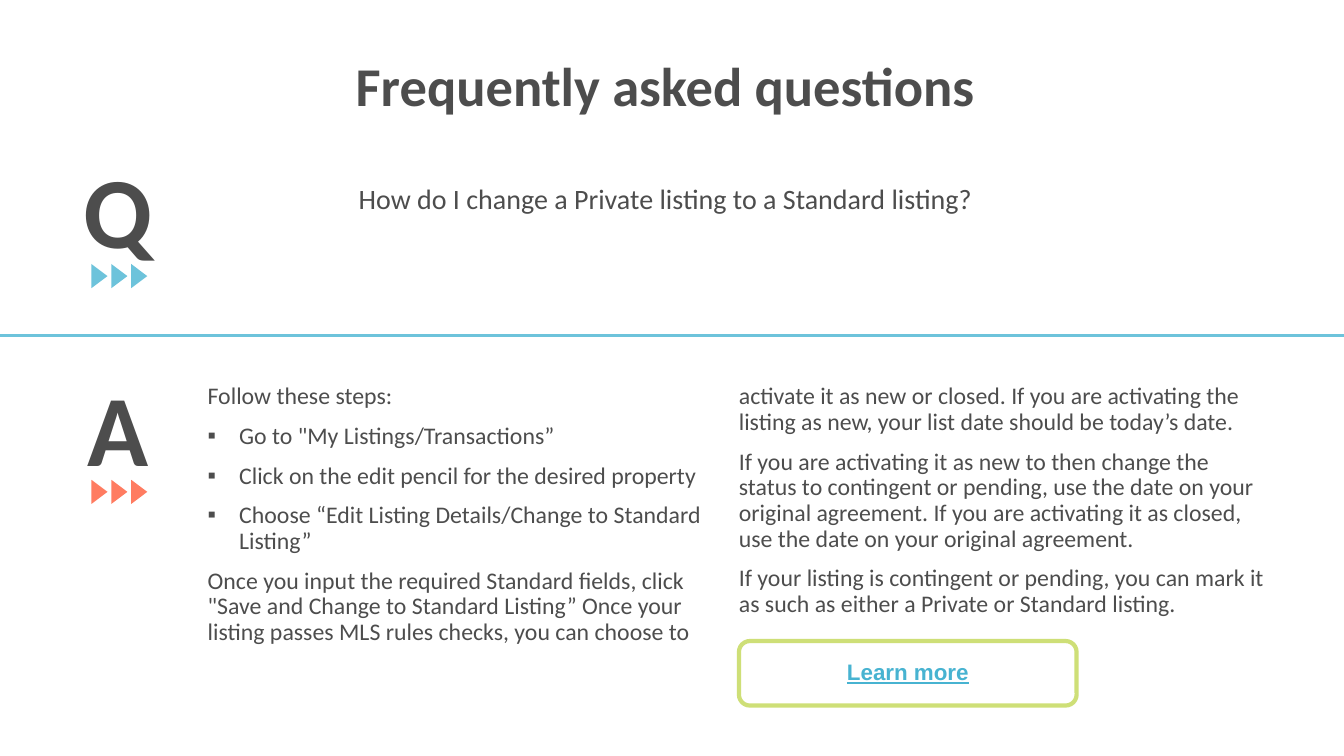
from lxml import etree
from pptx import Presentation
from pptx.dml.color import RGBColor
from pptx.enum.shapes import MSO_CONNECTOR, MSO_SHAPE
from pptx.enum.text import MSO_ANCHOR, MSO_AUTO_SIZE, PP_ALIGN
from pptx.oxml.ns import qn
from pptx.util import Pt

STRAIGHT = MSO_CONNECTOR.STRAIGHT
TRIANGLE = MSO_SHAPE.ISOSCELES_TRIANGLE
ROUNDED = MSO_SHAPE.ROUNDED_RECTANGLE
TOP = MSO_ANCHOR.TOP
NO_AUTOFIT = MSO_AUTO_SIZE.NONE
LEFT, CENTER = PP_ALIGN.LEFT, PP_ALIGN.CENTER

COLORS = {
    "text": "4D4D4D",
    "blue": "6DC3DB",
    "coral": "FF7C61",
    "green": "CEDF77",
    "link": "47B3D1",
    "white": "FFFFFF",
}
SLIDE_WIDTH, SLIDE_HEIGHT = 960, 540
BULLET_INDENT = 22.5

ANSWER = [
    ("Follow these steps:", False),
    ('Go to "My Listings/Transactions”', True),
    ("Click on the edit pencil for the desired property", True),
    ("Choose “Edit Listing Details/Change to Standard Listing”", True),
    ('Once you input the required Standard fields, click "Save and Change to '
     "Standard Listing” Once your listing passes MLS rules checks, you can "
     "choose to activate it as new or closed. If you are activating the "
     "listing as new, your list date should be today’s date.", False),
    ("If you are activating it as new to then change the status to contingent "
     "or pending, use the date on your original agreement. If you are "
     "activating it as closed, use the date on your original agreement.", False),
    ("If your listing is contingent or pending, you can mark it as such as "
     "either a Private or Standard listing.", False),
]


def color(name):
    return RGBColor.from_string(COLORS[name])


def apply_format(target, values):
    for name, value in values.items():
        setattr(target, name, value)


def place(shape, left, top, width, height):
    apply_format(shape, {"left": Pt(left), "top": Pt(top),
                         "width": Pt(width), "height": Pt(height)})


def set_bullet(paragraph, bulleted):
    indent = BULLET_INDENT if bulleted else 0
    properties = paragraph._p.get_or_add_pPr()
    properties.set("marL", str(Pt(indent)))
    properties.set("indent", str(-Pt(indent)))
    if bulleted:
        etree.SubElement(properties, qn("a:buChar")).set("char", "▪")
    else:
        etree.SubElement(properties, qn("a:buNone"))


def write(shape, paragraphs, size, font="Calibri", text_color="text",
          bold=False, underline=False, align=LEFT, spacing=0.9):
    frame = shape.text_frame
    apply_format(frame, {"word_wrap": True, "auto_size": NO_AUTOFIT,
                         "vertical_anchor": TOP})
    for index, (text, bulleted) in enumerate(paragraphs):
        paragraph = frame.add_paragraph() if index else frame.paragraphs[0]
        set_bullet(paragraph, bulleted)
        apply_format(paragraph, {"alignment": align, "line_spacing": spacing,
                                 "space_before": Pt(10 if index else 0)})
        run = paragraph.add_run()
        run.text = text
        apply_format(run.font, {"name": font, "size": Pt(size), "bold": bold,
                                "underline": underline})
        run.font.color.rgb = color(text_color)


def add_text(slide, box, text, size, **options):
    shape = slide.shapes.add_textbox(*map(Pt, box))
    write(shape, [(text, False)], size, **options)


def add_divider(slide, top):
    line = slide.shapes.add_connector(STRAIGHT, 0, Pt(top), Pt(SLIDE_WIDTH), Pt(top))
    line.line.color.rgb = color("blue")
    line.line.width = Pt(2.25)
    etree.SubElement(line._element.spPr, qn("a:effectLst"))


def add_arrows(slide, top, fill):
    group = slide.shapes.add_group_shape()
    for index in range(3):
        box = (62.4 + 14.2 * index, top, 17.3, 11.5)
        triangle = group.shapes.add_shape(TRIANGLE, *map(Pt, box))
        triangle.rotation = 90
        triangle.shadow.inherit = False
        triangle.fill.solid()
        triangle.fill.fore_color.rgb = color(fill)
        triangle.line.fill.background()


def add_letter(slide, letter, box, arrows_top, arrows_fill):
    add_text(slide, box, letter, 72, bold=True, spacing=1.0)
    add_arrows(slide, arrows_top, arrows_fill)


def add_button(slide, left, top, width, height, text):
    button = slide.shapes.add_shape(ROUNDED, *map(Pt, (left, top, width, height)))
    button.adjustments[0] = 0.17
    button.shadow.inherit = False
    button.fill.solid()
    button.fill.fore_color.rgb = color("white")
    button.line.color.rgb = color("green")
    button.line.width = Pt(3)
    add_text(slide, (left, top + 8.6, width, 26.6), text, 16, font="Arial",
             text_color="link", bold=True, underline=True, align=CENTER, spacing=1.0)


def add_answer(body):
    place(body, 141.1, 270.7, 773.3, 212.4)
    write(body, ANSWER, 17)
    columns = body.text_frame._txBody.bodyPr
    columns.set("numCol", "2")
    columns.set("spcCol", "0")


def main():
    presentation = Presentation()
    presentation.slide_width = Pt(SLIDE_WIDTH)
    presentation.slide_height = Pt(SLIDE_HEIGHT)
    slide = presentation.slides.add_slide(presentation.slide_layouts[1])
    title, body = slide.placeholders

    place(title, 51.8, 38.9, 846.7, 55.4)
    write(title, [("Frequently asked questions", False)], 39, bold=True, align=CENTER)
    add_answer(body)
    add_divider(slide, 239.8)
    add_letter(slide, "Q", (52.6, 102.2, 40.3, 94.3), 191.5, "blue")
    add_letter(slide, "A", (55.4, 257.8, 63.4, 94.3), 345.6, "coral")
    add_text(slide, (249.1, 128.9, 522.7, 74.2),
             "How do I change a Private listing to a Standard listing?", 20)
    add_button(slide, 527.8, 457.9, 241.2, 46.1, "Learn more")
    presentation.save("out.pptx")


if __name__ == "__main__":
    main()
